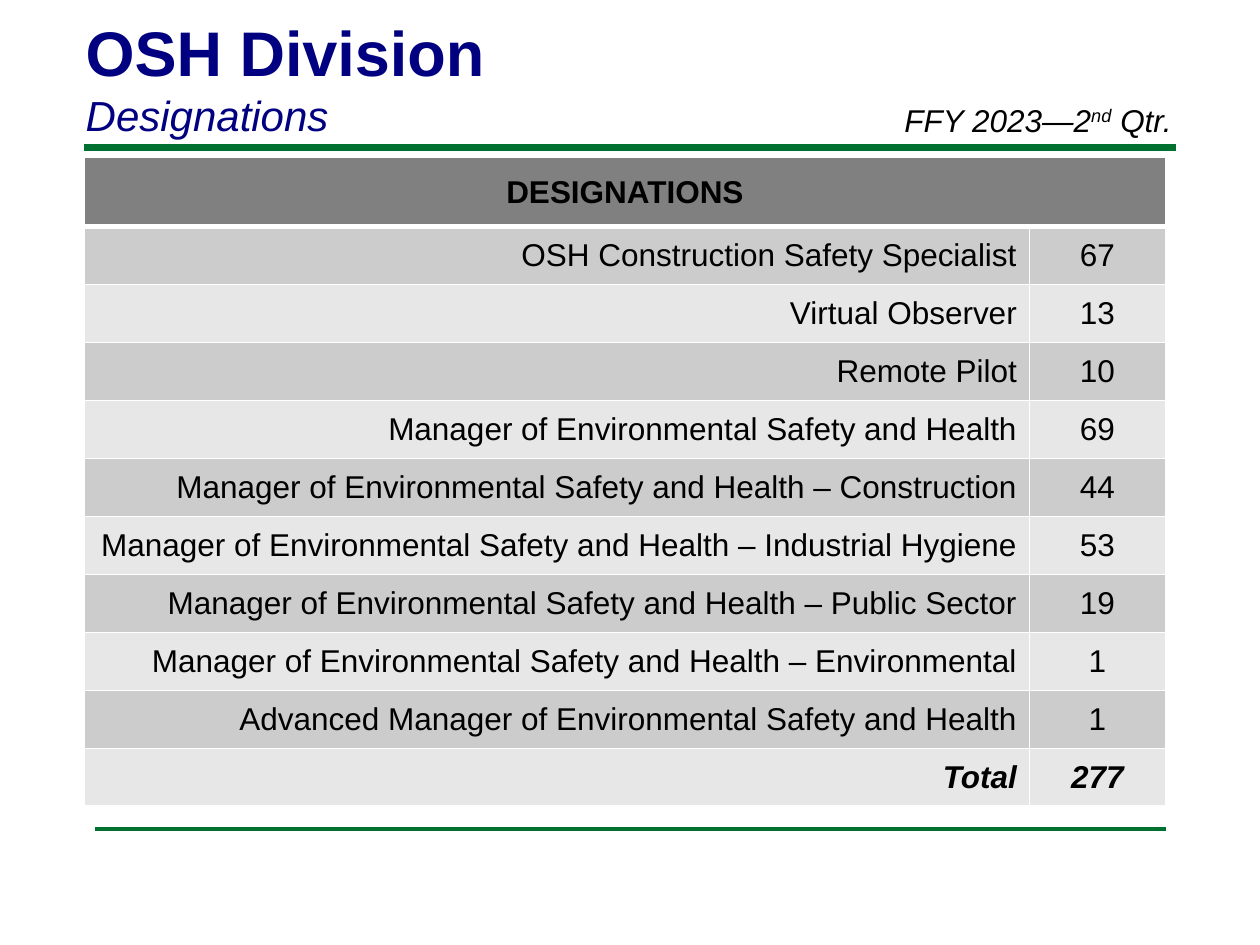
"""Build the OSH Division designations slide."""
from dataclasses import dataclass

from lxml import etree
from pptx import Presentation
from pptx.dml.color import RGBColor
from pptx.enum import shapes, text
from pptx.oxml import ns
from pptx.util import Inches, Pt

GREEN, NAVY, BLACK, WHITE = "007030", "000080", "000000", "FFFFFF"
HEADER_FILL, BAND_FILLS = "808080", ("CCCCCC", "E7E7E7")
ALIGN = text.PP_ALIGN
MANAGER = "Manager of Environmental Safety and Health"


@dataclass
class Rule:
    left: float
    right: float
    top: float
    weight: float


@dataclass
class Designation:
    name: str
    count: int


RULES = [Rule(0.67, 9.33, 1.17, 4), Rule(0.75, 9.25, 6.58, 2)]
DESIGNATIONS = [
    Designation("OSH Construction Safety Specialist", 67),
    Designation("Virtual Observer", 13),
    Designation("Remote Pilot", 10),
    Designation(MANAGER, 69),
    Designation(f"{MANAGER} – Construction", 44),
    Designation(f"{MANAGER} – Industrial Hygiene", 53),
    Designation(f"{MANAGER} – Public Sector", 19),
    Designation(f"{MANAGER} – Environmental", 1),
    Designation(f"Advanced {MANAGER}", 1),
]


def rgb(value: str) -> RGBColor:
    return RGBColor.from_string(value)


def add_text(paragraph, content: str, *, size: float = 18, color: str = BLACK,
             bold: bool = False, italic: bool = False, align=ALIGN.LEFT,
             baseline: int = 0) -> None:
    paragraph.alignment = align
    run = paragraph.add_run()
    run.text = content
    font = run.font
    font.name, font.size, font.bold, font.italic = "Arial", Pt(size), bold, italic
    font.color.rgb = rgb(color)
    if baseline:
        run._r.get_or_add_rPr().set("baseline", str(baseline * 1000))


def place(shape, left: float, top: float, width: float, height: float) -> None:
    shape.left, shape.top = Inches(left), Inches(top)
    shape.width, shape.height = Inches(width), Inches(height)


def add_rule(slide, rule: Rule) -> None:
    connector = slide.shapes.add_connector(
        shapes.MSO_CONNECTOR.STRAIGHT, Inches(rule.left), Inches(rule.top),
        Inches(rule.right), Inches(rule.top))
    connector.line.color.rgb = rgb(GREEN)
    connector.line.width = Pt(rule.weight)
    etree.SubElement(connector._element.spPr, ns.qn("a:effectLst"))


def add_title(slide) -> None:
    title = slide.shapes.title
    place(title, 0.58, 0.06, 8.25, 1.11)
    frame = title.text_frame
    frame.auto_size = text.MSO_AUTO_SIZE.NONE
    frame.vertical_anchor = text.MSO_ANCHOR.TOP
    add_text(frame.paragraphs[0], "OSH Division", size=36, color=NAVY, bold=True)
    add_text(frame.add_paragraph(), "Designations", size=24, color=NAVY, italic=True)


def add_period(slide) -> None:
    box = slide.shapes.add_textbox(Inches(7.08), Inches(0.75), Inches(2.5), Inches(0.4))
    box.text_frame.word_wrap = True
    paragraph = box.text_frame.paragraphs[0]
    for content, baseline in (("FFY 2023—2", 0), ("nd", 30), (" Qtr.", 0)):
        add_text(paragraph, content, italic=True, baseline=baseline)


def format_cell(cell, fill: str, top: float = 1, bottom: float = 1) -> None:
    properties = cell._tc.get_or_add_tcPr()
    for side, weight in (("L", 1), ("R", 1), ("T", top), ("B", bottom)):
        border = etree.SubElement(properties, ns.qn(f"a:ln{side}"), w=str(Pt(weight)))
        solid = etree.SubElement(border, ns.qn("a:solidFill"))
        etree.SubElement(solid, ns.qn("a:srgbClr"), val=WHITE)
    cell.fill.solid()
    cell.fill.fore_color.rgb = rgb(fill)
    cell.vertical_anchor = text.MSO_ANCHOR.MIDDLE


def add_designations(slide, designations: list[Designation]) -> None:
    total = Designation("Total", sum(item.count for item in designations))
    rows = [*designations, total]
    table = slide.shapes.add_table(len(rows) + 1, 2, Inches(0.67), Inches(1.25),
                                   Inches(8.58), Inches(5.17)).table
    for column, width in zip(table.columns, (7.5, 1.08)):
        column.width = Inches(width)
    for index, row in enumerate(table.rows):
        row.height = Inches(0.46 if index else 0.55)

    header = table.cell(0, 0)
    header.merge(table.cell(0, 1))
    for cell in table.rows[0].cells:
        format_cell(cell, HEADER_FILL, bottom=3)
    add_text(header.text_frame.paragraphs[0], "DESIGNATIONS", bold=True, align=ALIGN.CENTER)

    for index, item in enumerate(rows):
        emphasis = item is total
        contents = ((item.name, ALIGN.RIGHT), (str(item.count), ALIGN.CENTER))
        for cell, (content, align) in zip(table.rows[index + 1].cells, contents):
            format_cell(cell, BAND_FILLS[index % 2], top=1 if index else 3)
            add_text(cell.text_frame.paragraphs[0], content, align=align,
                     bold=emphasis, italic=emphasis)


def main() -> None:
    presentation = Presentation()
    presentation.slide_width, presentation.slide_height = Inches(10), Inches(7.5)
    slide = presentation.slides.add_slide(presentation.slide_layouts.get_by_name("Title Only"))
    for rule in RULES:
        add_rule(slide, rule)
    add_title(slide)
    add_period(slide)
    add_designations(slide, DESIGNATIONS)
    presentation.save("out.pptx")


if __name__ == "__main__":
    main()
